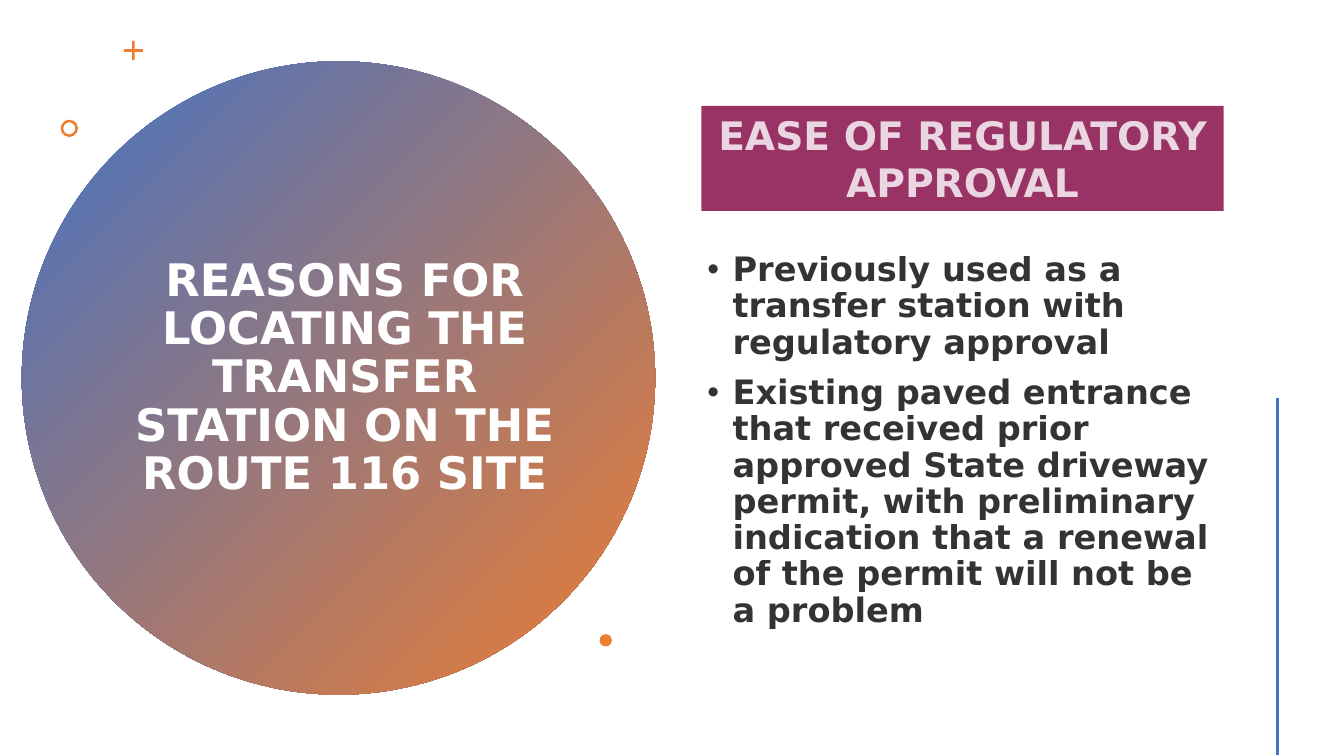
"""Builds the slide on regulatory approval for the Route 116 transfer station."""
from lxml import etree
from pptx import Presentation
from pptx.dml.color import RGBColor
from pptx.enum.shapes import MSO_CONNECTOR, MSO_SHAPE
from pptx.enum.text import MSO_ANCHOR, MSO_AUTO_SIZE, PP_ALIGN
from pptx.oxml.ns import qn
from pptx.util import Pt

OVAL, RECT = MSO_SHAPE.OVAL, MSO_SHAPE.RECTANGLE
CROSS, RING = MSO_SHAPE.CROSS, MSO_SHAPE.DONUT
STRAIGHT = MSO_CONNECTOR.STRAIGHT
MIDDLE, CENTER, LEFT = MSO_ANCHOR.MIDDLE, PP_ALIGN.CENTER, PP_ALIGN.LEFT
NO_FIT = MSO_AUTO_SIZE.NONE

FONT = "DejaVu Sans"
COLORS = {"blue": "4472C4", "orange": "ED7D31", "plum": "993366",
          "white": "FFFFFF", "black": "000000"}
TITLE = ["REASONS FOR LOCATING THE", "TRANSFER STATION ON THE ROUTE 116 SITE"]
HEADING = "EASE OF REGULATORY APPROVAL"
REASONS = [
    "Previously used as a transfer station with regulatory approval",
    "Existing paved entrance that received prior approved State driveway permit, "
    "with preliminary indication that a renewal of the permit will not be a problem",
]
CIRCLE_BOX = (15.6, 43.8, 452.4, 452.4)
TITLE_BOX = (85, 102.2, 322.6, 336.2)
HEADING_BOX = (501, 75.6, 373, 75)
REASONS_BOX = (498.2, 191.5, 375.8, 247)
ACCENTS = [
    (CROSS, (88.5, 29.3, 13.6, 13.6), 0.43),
    (RING, (43.3, 85.5, 12.4, 12.4), 0.15),
    (OVAL, (428.3, 453, 8.8, 8.8), None),
]
RULE_X, RULE_TOP, RULE_BOTTOM = 912.4, 284, 539.5
INDENT = 18


def rgb(name):
    return RGBColor.from_string(COLORS[name])


def points(box):
    return [Pt(v) for v in box]


def add_shape(s, kind, box, color=None):
    sp = s.shapes.add_shape(kind, *points(box))
    sp.shadow.inherit = False
    sp.line.fill.background()
    if color:
        sp.fill.solid()
        sp.fill.fore_color.rgb = rgb(color)
    return sp


def add_run(p, text, size, color, opacity=100):
    r = p.add_run()
    r.text = text
    r.font.name, r.font.size, r.font.bold = FONT, Pt(size), True
    r.font.color.rgb = rgb(color)
    if opacity < 100:
        clr = r.font.fill._xPr.find(".//" + qn("a:srgbClr"))
        etree.SubElement(clr, qn("a:alpha"), val=str(opacity * 1000))


def set_frame(sp):
    tf = sp.text_frame
    tf.word_wrap = True
    tf.auto_size = NO_FIT
    tf.vertical_anchor = MIDDLE
    return tf


def add_title(s):
    title = s.shapes.title
    title.left, title.top, title.width, title.height = points(TITLE_BOX)
    p = set_frame(title).paragraphs[0]
    p.alignment, p.line_spacing = CENTER, 0.9
    for i, line in enumerate(TITLE):
        if i:
            p.add_line_break()
        add_run(p, line, 32, "white")
    circle = add_shape(s, OVAL, CIRCLE_BOX)
    circle.fill.gradient()
    circle.fill.gradient_angle = 315
    for stop, color in zip(circle.fill.gradient_stops, ("blue", "orange")):
        stop.color.rgb = rgb(color)
    title._element.addprevious(circle._element)


def add_reasons(s):
    tf = set_frame(s.shapes.add_textbox(*points(REASONS_BOX)))
    for i, reason in enumerate(REASONS):
        p = tf.add_paragraph() if i else tf.paragraphs[0]
        p.alignment, p.line_spacing, p.space_before = LEFT, 0.9, Pt(10)
        pPr = p._p.get_or_add_pPr()
        pPr.set("marL", str(Pt(INDENT)))
        pPr.set("indent", str(-Pt(INDENT)))
        etree.SubElement(pPr, qn("a:buFont"), typeface="Arial")
        etree.SubElement(pPr, qn("a:buChar"), char="•")
        add_run(p, reason, 24, "black", 80)


def add_rule(s):
    rule = s.shapes.add_connector(
        STRAIGHT, *points((RULE_X, RULE_TOP, RULE_X, RULE_BOTTOM)))
    rule.line.color.rgb = rgb("blue")
    rule.line.width = Pt(2)
    etree.SubElement(rule._element.spPr, qn("a:effectLst"))


def main():
    prs = Presentation()
    prs.slide_width, prs.slide_height = Pt(960), Pt(540)
    s = prs.slides.add_slide(prs.slide_layouts[5])
    add_title(s)
    for kind, box, adjustment in ACCENTS:
        sp = add_shape(s, kind, box, "orange")
        if adjustment:
            sp.adjustments[0] = adjustment
    add_reasons(s)
    add_rule(s)
    heading = add_shape(s, RECT, HEADING_BOX, "plum")
    p = set_frame(heading).paragraphs[0]
    p.alignment = CENTER
    add_run(p, HEADING, 28, "white", 80)
    prs.save("out.pptx")


if __name__ == "__main__":
    main()
